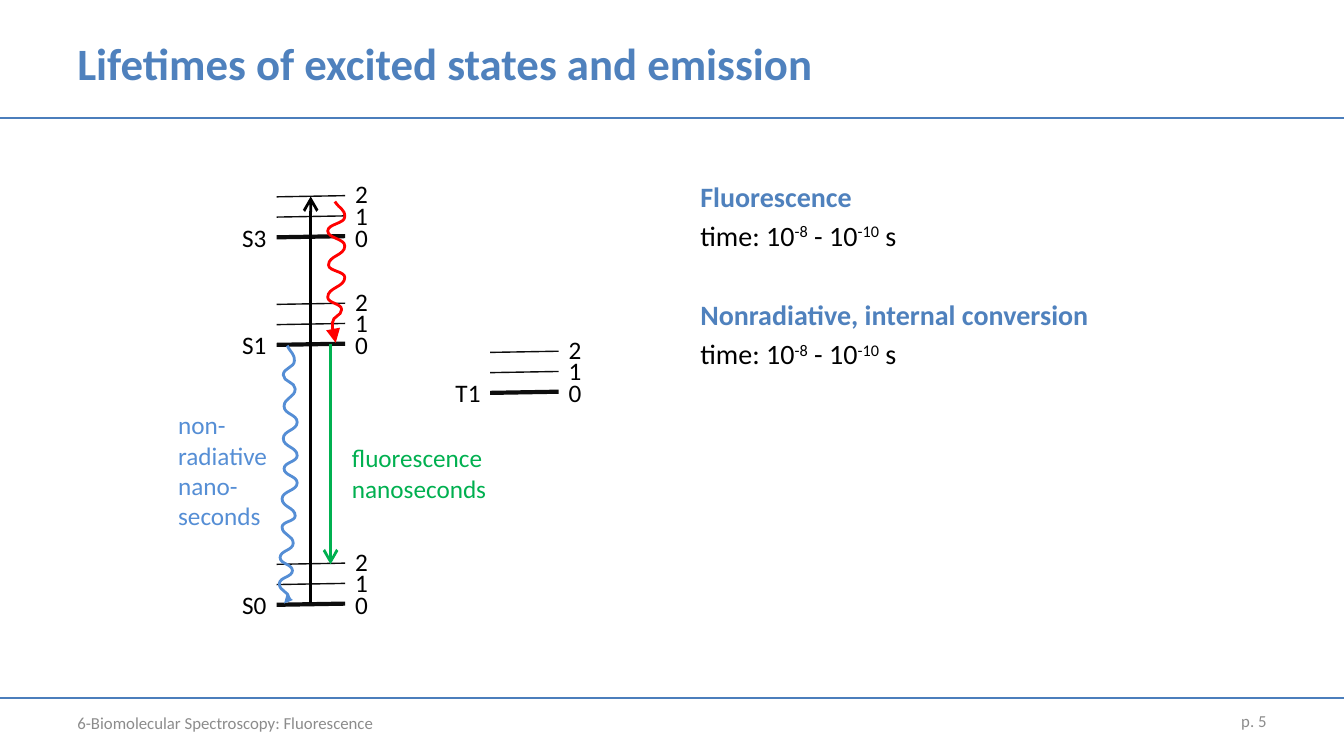
from lxml import etree
from pptx import Presentation
from pptx import util as u
from pptx.dml.color import RGBColor
from pptx.enum import shapes, text
from pptx.oxml import ns

BLUE = RGBColor(0x4F, 0x81, 0xBD)
RULE = RGBColor(0x4B, 0x7E, 0xBC)
SKY = RGBColor(0x55, 0x8E, 0xD5)
GREEN = RGBColor(0x00, 0xB0, 0x50)
RED = RGBColor(0xFF, 0x00, 0x00)
GREY = RGBColor(0x8C, 0x8C, 0x8C)
INK = RGBColor(0x0D, 0x0D, 0x0D)
BLACK = RGBColor(0x00, 0x00, 0x00)


class Board:
    font = "Calibri"

    def __init__(self, slide):
        self.slide = slide

    def style(self, run, size, color, bold=False):
        run.font.name = self.font
        run.font.size = u.Pt(size)
        run.font.bold = bold
        run.font.color.rgb = color

    def box(self, x, y, w, h, wrap=True, middle=False):
        shape = self.slide.shapes.add_textbox(u.Cm(x), u.Cm(y), u.Cm(w), u.Cm(h))
        frame = shape.text_frame
        frame.word_wrap = wrap
        if middle:
            frame.vertical_anchor = text.MSO_ANCHOR.MIDDLE
        return frame

    def label(self, words, x, y, w, h, size=18, color=BLACK, bold=False,
              wrap=True, middle=False, right=False):
        frame = self.box(x, y, w, h, wrap, middle)
        frame.text = words
        for para in frame.paragraphs:
            para.alignment = text.PP_ALIGN.RIGHT if right else text.PP_ALIGN.LEFT
            self.style(para.runs[0], size, color, bold)

    def stroke(self, shape, color, width, head=None, size="lg"):
        shape.line.color.rgb = color
        shape.line.width = u.Pt(width)
        if head:
            line = shape.line._get_or_add_ln()
            etree.SubElement(line, ns.qn("a:tailEnd"), type=head, w=size, len=size)

    def line(self, x1, y1, x2, y2, color, width, head=None):
        line = self.slide.shapes.add_connector(
            shapes.MSO_CONNECTOR.STRAIGHT, u.Cm(x1), u.Cm(y1), u.Cm(x2), u.Cm(y2))
        self.stroke(line, color, width, head)
        etree.SubElement(line._element.spPr, ns.qn("a:effectLst"))

    def wave(self, turns, color, size):
        """Draw a smooth wave that swings from one turning point to the next."""
        points = [(u.Cm(x), u.Cm(y)) for x, y in turns]
        path = self.slide.shapes.build_freeform(*points[0])
        path.add_line_segments(points[1:], close=False)
        shape = path.convert_to_shape()
        shape.shadow.inherit = False
        shape.fill.background()
        self.stroke(shape, color, 2, "triangle", size)
        self.bend(shape)

    def bend(self, shape):
        """Turn straight segments into curves that are upright at each turn."""
        spots = list(shape._element.iter(ns.qn("a:pt")))
        ends = [(int(p.get("x")), int(p.get("y"))) for p in spots]
        for n, (spot, (x1, y1), (x2, y2)) in enumerate(zip(spots[1:], ends, ends[1:])):
            mid = (y1 + y2) // 2
            lead = x1 if n else (x1 + x2) // 2
            step = spot.getparent()
            step.tag = ns.qn("a:cubicBezTo")
            for i, x in enumerate((lead, x2)):
                pull = etree.Element(ns.qn("a:pt"), x=str(x), y=str(mid))
                step.insert(i, pull)

    def state(self, name, x, y):
        """Draw one electronic state with its three vibrational levels."""
        self.label(name, x - 1.12, y - 0.51, 1.14, 1.02, wrap=False)
        for i in range(3):
            rise = y - 0.51 * i
            self.line(x, rise, x + 1.73, rise - 0.03, INK, 1 if i else 3)
            self.label(str(i), x + 1.73, y - 0.51 - 0.55 * i, 0.84, 1.02, wrap=False)

    def facts(self, topics, x, y, w, h):
        frame = self.box(x, y, w, h)
        for n, (title, parts) in enumerate(topics):
            head = frame.add_paragraph() if n else frame.paragraphs[0]
            head.text = title
            head.space_before = u.Pt(32.4 if n else 4)
            self.style(head.runs[0], 20, BLUE, True)
            para = frame.add_paragraph()
            para.space_before = u.Pt(4)
            for i, part in enumerate(parts):
                run = para.add_run()
                run.text = part
                self.style(run, 20, BLACK)
                if i % 2:  # every second part is an exponent
                    run._r.get_or_add_rPr().set("baseline", "30000")


def main():
    deck = Presentation()
    deck.slide_width, deck.slide_height = u.Cm(33.87), u.Cm(19.05)
    board = Board(deck.slides.add_slide(deck.slide_layouts[6]))

    # Title, rules and footer
    for y in (17.59, 2.97):
        board.line(0, y, 33.87, y, RULE, 1.5)
    board.label("Lifetimes of excited states and emission", 1.7, 0, 30.48, 3.17,
                32, BLUE, bold=True, middle=True)
    board.label("6-Biomolecular Spectroscopy: Fluorescence", 1.7, 17.7, 10.72, 1.02,
                12, GREY, middle=True)
    board.label("p. 5", 24.27, 17.65, 7.9, 1.02, 12, GREY, middle=True, right=True)

    # Lifetimes
    span = ("time: 10", "-8", " - 10", "-10", " s")
    board.facts([("Fluorescence", span), ("Nonradiative, internal conversion", span)],
                17.4, 4.39, 10.97, 11.76)

    # Energy levels
    for name, x, y in (("S0", 6.97, 15.24), ("S1", 6.97, 8.69),
                       ("T1", 12.35, 9.9), ("S3", 6.97, 5.98)):
        board.state(name, x, y)

    # Absorption and fluorescence
    board.line(7.83, 15.19, 7.83, 4.95, BLACK, 2, "arrow")
    board.line(8.33, 8.66, 8.33, 14.22, GREEN, 2, "arrow")
    board.label("fluorescence\nnanoseconds", 8.62, 11.03, 5.74, 1.8, color=GREEN)

    # Nonradiative decay
    board.wave([(8.44, 5.08), (8.69, 5.46), (8.26, 5.82), (8.69, 6.2), (8.28, 6.68),
                (8.69, 6.99), (8.26, 7.49), (8.61, 7.8), (8.38, 8.13), (8.46, 8.64)],
               RED, "lg")
    board.wave([(7.24, 8.71), (7.42, 9.09), (7.14, 9.45), (7.44, 9.8), (7.16, 10.24),
                (7.49, 10.64), (7.14, 11.05), (7.49, 11.48), (7.16, 11.81),
                (7.49, 12.17), (7.11, 12.57), (7.44, 13), (7.11, 13.28), (7.39, 13.69),
                (7.06, 14.05), (7.37, 14.38), (7.04, 14.71), (7.29, 15.09),
                (7.16, 15.21)], SKY, "med")
    board.label("non-radiative\nnano-seconds", 4.24, 10.2, 3.33, 3.33, color=SKY)

    deck.save("out.pptx")


if __name__ == "__main__":
    main()
